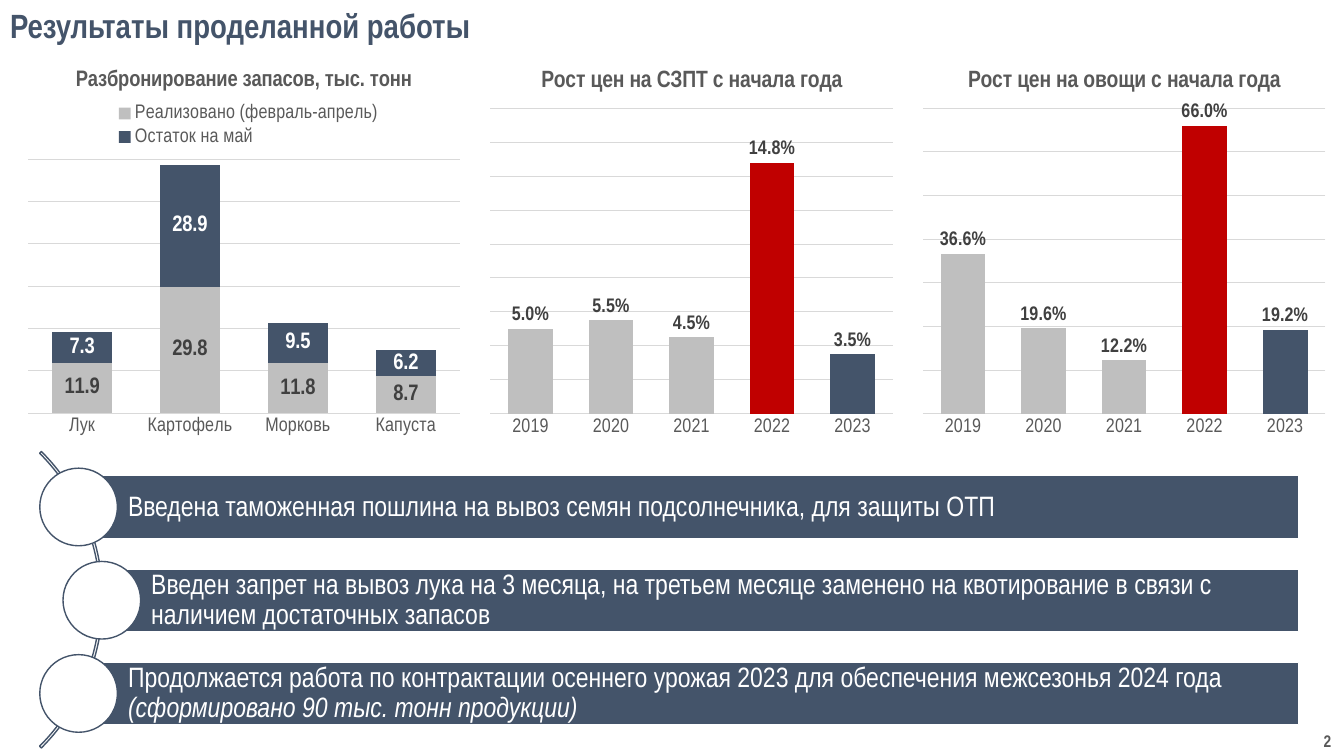
"""Build the slide on results of the work done: three column charts and three measures."""
import pptx
import pptx.chart.data
import pptx.dml.color
import pptx.enum.chart
import pptx.enum.shapes
import pptx.enum.text
import pptx.oxml
import pptx.util

FONT = "Arial Narrow"
NAVY, GREY, RED, WHITE = "44546A", "BFBFBF", "C00000", "FFFFFF"
TEXT_GREY, LABEL_GREY, GRID_GREY = "595959", "404040", "D9D9D9"
CHART_NS = "http://schemas.openxmlformats.org/drawingml/2006/chart"

Inches, Pt = pptx.util.Inches, pptx.util.Pt
Shape = pptx.enum.shapes.MSO_SHAPE
ChartType = pptx.enum.chart.XL_CHART_TYPE
LabelPosition = pptx.enum.chart.XL_LABEL_POSITION
Anchor = pptx.enum.text.MSO_ANCHOR
Align = pptx.enum.text.PP_ALIGN


def style(font, size, color, bold=False):
    font.name, font.size, font.bold = FONT, Pt(size), bold
    font.color.rgb = pptx.dml.color.RGBColor.from_string(color)


def paint(part, color, width=None):
    if width is None:
        part.fill.solid()
        target = part.fill.fore_color
    else:
        part.line.width = Pt(width)
        target = part.line.color
    target.rgb = pptx.dml.color.RGBColor.from_string(color)


deck = pptx.Presentation()
deck.slide_width, deck.slide_height = Inches(13.33), Inches(7.5)
slide = deck.slides.add_slide(deck.slide_layouts[5])

heading = slide.shapes.title
heading.left, heading.top, heading.width, heading.height = 0, 0, deck.slide_width, Inches(0.5)
heading.text_frame.text = "Результаты проделанной работы"
heading.text_frame.vertical_anchor = Anchor.MIDDLE
heading.text_frame.paragraphs[0].alignment = Align.LEFT
style(heading.text_frame.paragraphs[0].font, 24, NAVY, True)

page_number = slide.shapes.add_textbox(Inches(13), Inches(7.2), Inches(0.33), Inches(0.3))
page_number.text_frame.word_wrap = False
page_number.text_frame.text = "2"
page_number.text_frame.paragraphs[0].alignment = Align.CENTER
style(page_number.text_frame.paragraphs[0].font, 12, TEXT_GREY, True)

YEARS = ["2019", "2020", "2021", "2022", "2023"]
YEAR_COLORS = {3: RED, 4: NAVY}
STOCKS = [("Реализовано (февраль-апрель)", [11.9, 29.8, 11.8, 8.7], GREY, LABEL_GREY),
          ("Остаток на май", [7.3, 28.9, 9.5, 6.2], NAVY, WHITE)]
STAPLES = [("СЗПТ", [0.05, 0.055, 0.045, 0.148, 0.035], GREY, LABEL_GREY)]
VEGETABLES = [("Овощи", [0.366, 0.196, 0.122, 0.66, 0.192], GREY, LABEL_GREY)]
panels = [
    ("Разбронирование запасов, тыс. тонн", 0.19, 4.46, True, 60, 10,
     ["Лук", "Картофель", "Морковь", "Капуста"], STOCKS),
    ("Рост цен на СЗПТ с начала года", 4.78, 4.16, False, 0.18, 0.02, YEARS, STAPLES),
    ("Рост цен на овощи с начала года", 9.07, 4.16, False, 0.7, 0.1, YEARS, VEGETABLES),
]
for title, left, width, stacked, top_value, step, categories, rows in panels:
    number_format = "#,##0.0" if stacked else "0.0%"
    data = pptx.chart.data.CategoryChartData(number_format=number_format)
    data.categories = categories
    for name, values, _, _ in rows:
        data.add_series(name, values)
    kind = ChartType.COLUMN_STACKED if stacked else ChartType.COLUMN_CLUSTERED
    chart = slide.shapes.add_chart(
        kind, Inches(left), Inches(0.5), Inches(width), Inches(3.91), data).chart
    style(chart.font, 14, TEXT_GREY)
    chart.has_title = True
    chart.chart_title.text_frame.text = title
    style(chart.chart_title.text_frame.paragraphs[0].font, 16 if stacked else 16.8, TEXT_GREY, True)
    chart.chart_title.include_in_layout = False

    values_axis = chart.value_axis
    values_axis.visible = False
    values_axis.minimum_scale, values_axis.maximum_scale = 0, top_value
    values_axis.major_unit = step
    values_axis.has_major_gridlines = True
    grid_format = values_axis.major_gridlines.format
    paint(grid_format, GRID_GREY, 0.75)
    names_axis = chart.category_axis
    names_axis.major_tick_mark = pptx.enum.chart.XL_TICK_MARK.NONE
    paint(names_axis.format, GRID_GREY, 0.75)
    style(names_axis.tick_labels.font, 14, TEXT_GREY)

    plot = chart.plots[0]
    plot.gap_width = 80
    plot.vary_by_categories = False
    if stacked:
        plot.overlap = 100
    for series, (_, _, color, label_color) in zip(plot.series, rows):
        paint(series.format, color)
        series.invert_if_negative = False
        labels = series.data_labels
        labels.show_value = True
        labels.number_format, labels.number_format_is_linked = number_format, False
        labels.position = LabelPosition.CENTER if stacked else LabelPosition.OUTSIDE_END
        style(labels.font, 16 if stacked else 14, label_color, True)
        if not stacked:
            for index, point_color in YEAR_COLORS.items():
                paint(series.points[index].format, point_color)

    chart.has_legend = stacked
    plot_top, plot_height = (0.276, 0.645) if stacked else (0.147, 0.775)
    frames = [(chart._chartSpace.chart.plotArea, 0, True, (0.02, plot_top, 0.96, plot_height))]
    if stacked:
        chart.legend.position = pptx.enum.chart.XL_LEGEND_POSITION.TOP
        chart.legend.include_in_layout = False
        style(chart.legend.font, 14, TEXT_GREY)
        frames.append((chart.legend._element, 1, False, (0.2, 0.125, 0.62, 0.13)))
    for element, index, inner, (x, y, w, h) in frames:
        for old_layout in element.findall(f"{{{CHART_NS}}}layout"):
            element.remove(old_layout)
        target = '<c:layoutTarget val="inner"/>' if inner else ""
        element.insert(index, pptx.oxml.parse_xml(
            f'<c:layout xmlns:c="{CHART_NS}"><c:manualLayout>{target}'
            f'<c:xMode val="edge"/><c:yMode val="edge"/><c:x val="{x}"/><c:y val="{y}"/>'
            f'<c:w val="{w}"/><c:h val="{h}"/></c:manualLayout></c:layout>'))

arc = slide.shapes.add_shape(
    Shape.BLOCK_ARC, Inches(-3.14), Inches(3.87), Inches(4.16), Inches(4.16))
arc.adjustments[0], arc.adjustments[1], arc.adjustments[2] = 189, 27, 0.006
arc.shadow.inherit = False
arc.fill.background()
paint(arc, NAVY, 1)

BAR_RIGHT, BAR_HEIGHT, CIRCLE = 12.88, 0.62, 0.77
FIRST_MIDDLE, PITCH = 5.03, 0.925
measures = [
    (0.78, ["Введена таможенная пошлина на вывоз семян подсолнечника, для защиты ОТП"]),
    (1.01, ["Введен запрет на вывоз лука на 3 месяца, на третьем месяце заменено на "
            "квотирование в связи с наличием достаточных запасов"]),
    (0.78, ["Продолжается работа по контрактации осеннего урожая 2023 для обеспечения "
            "межсезонья 2024 года ", "(сформировано 90 тыс. тонн продукции)"]),
]
for row, (center, phrases) in enumerate(measures):
    middle = FIRST_MIDDLE + row * PITCH
    bar = slide.shapes.add_shape(
        Shape.RECTANGLE, Inches(center), Inches(middle - BAR_HEIGHT / 2),
        Inches(BAR_RIGHT - center), Inches(BAR_HEIGHT))
    circle = slide.shapes.add_shape(
        Shape.OVAL, Inches(center - CIRCLE / 2), Inches(middle - CIRCLE / 2),
        Inches(CIRCLE), Inches(CIRCLE))
    for part, fill, outline in ((bar, NAVY, WHITE), (circle, WHITE, NAVY)):
        part.shadow.inherit = False
        paint(part, fill)
        paint(part, outline, 1)
    frame = bar.text_frame
    frame.word_wrap = True
    frame.vertical_anchor = Anchor.MIDDLE
    frame.margin_left = Inches(0.49)
    frame.margin_top = frame.margin_right = frame.margin_bottom = Inches(0.06)
    paragraph = frame.paragraphs[0]
    paragraph.alignment, paragraph.line_spacing = Align.LEFT, 0.9
    style(paragraph.font, 20, WHITE)
    for order, phrase in enumerate(phrases):
        run = paragraph.add_run()
        run.text = phrase
        if order:
            run.font.italic = True

deck.save("out.pptx")
